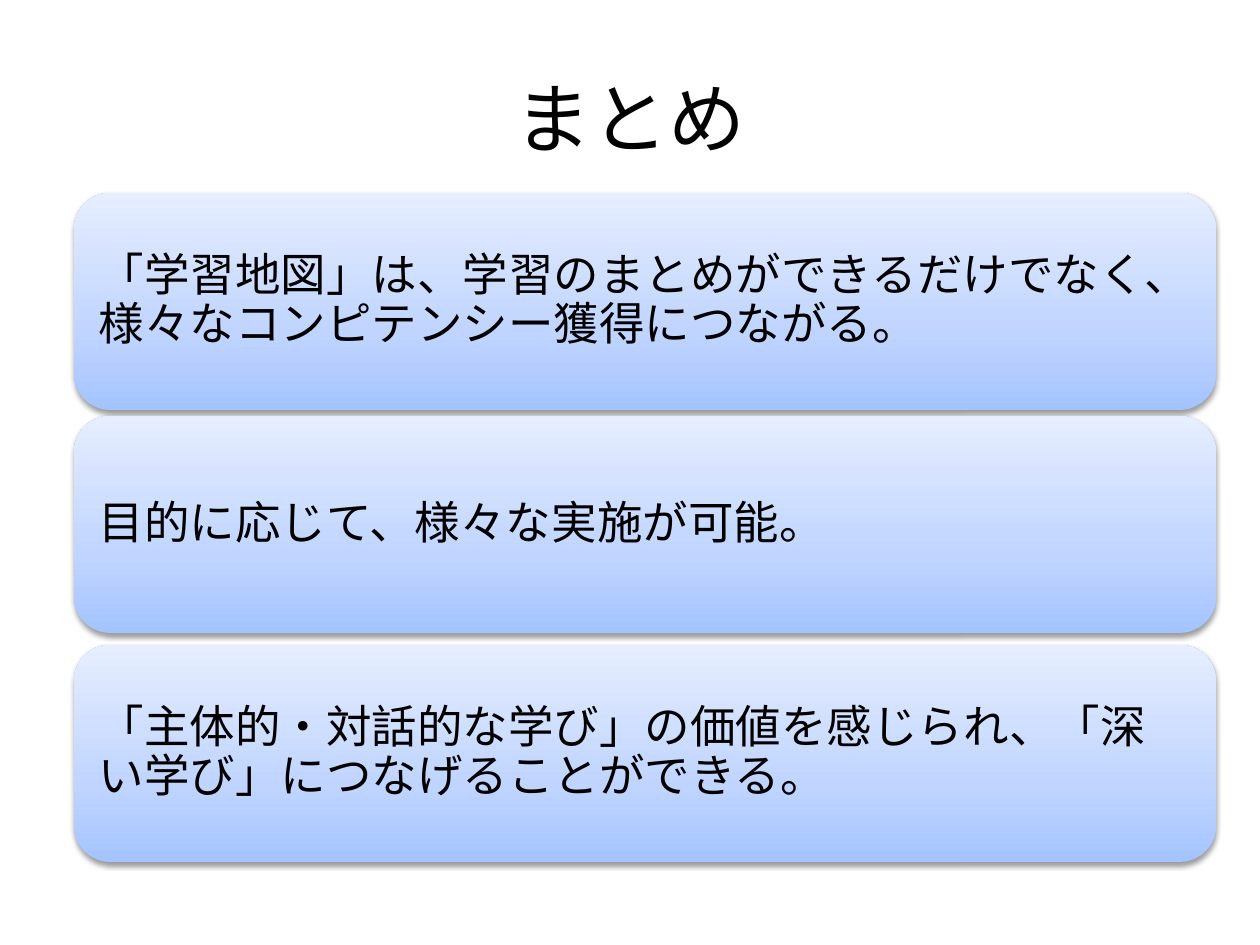
from dataclasses import dataclass

from pptx import Presentation
from pptx.dml.color import RGBColor
from pptx.enum.shapes import MSO_SHAPE
from pptx.enum.text import MSO_ANCHOR, PP_ALIGN
from pptx.oxml import parse_xml
from pptx.oxml.ns import nsdecls
from pptx.shapes.autoshape import Shape
from pptx.slide import Slide
from pptx.util import Emu, Pt

PX_PER_INCH = 126
FONT = "Lato"
BLACK = RGBColor(0x00, 0x00, 0x00)
GRADIENT = (
    (0, RGBColor(0xA4, 0xC4, 0xFF)),
    (35, RGBColor(0xBF, 0xD4, 0xFF)),
    (100, RGBColor(0xE6, 0xEE, 0xFF)),
)

CARD_LEFT, CARD_WIDTH, CARD_HEIGHT = 74, 1142, 217
CARD_INSET = 14


@dataclass(frozen=True)
class Card:
    top: int
    text: str


CARDS = (
    Card(193, "「学習地図」は、学習のまとめができるだけでなく、様々なコンピテンシー獲得につながる。"),
    Card(416, "目的に応じて、様々な実施が可能。"),
    Card(645, "「主体的・対話的な学び」の価値を感じられ、「深い学び」につなげることができる。"),
)


def px(length: int) -> Emu:
    return Emu(round(length * 914400 / PX_PER_INCH))


def write_text(shape: Shape, text: str, size: int, align: PP_ALIGN, spacing: float) -> None:
    frame = shape.text_frame
    frame.word_wrap = True
    frame.vertical_anchor = MSO_ANCHOR.MIDDLE
    para = frame.paragraphs[0]
    para.text = text
    para.alignment = align
    para.line_spacing = spacing
    para.font.name = FONT
    para.font.size = Pt(size)
    para.font.color.rgb = BLACK


def add_gradient_and_shadow(shape: Shape) -> None:
    """Fill upwards from dark to light and cast a soft shadow below."""
    stops = "".join(
        f'<a:gs pos="{percent * 1000}"><a:srgbClr val="{color}"/></a:gs>'
        for percent, color in GRADIENT
    )
    fill = parse_xml(
        f'<a:gradFill {nsdecls("a")} rotWithShape="1"><a:gsLst>{stops}</a:gsLst>'
        '<a:lin ang="16200000" scaled="0"/></a:gradFill>'
    )
    shadow = parse_xml(
        f'<a:effectLst {nsdecls("a")}>'
        f'<a:outerShdw blurRad="{Pt(3.1)}" dist="{Pt(1.6)}" dir="5400000" rotWithShape="0">'
        f'<a:srgbClr val="{BLACK}"><a:alpha val="38000"/></a:srgbClr>'
        "</a:outerShdw></a:effectLst>"
    )
    shape.line.fill.background()
    outline = shape.line._get_or_add_ln()
    outline.addprevious(fill)
    outline.addnext(shadow)


def add_title(page: Slide, text: str) -> None:
    box = page.shapes.add_textbox(px(63), px(38), px(1134), px(158))
    write_text(box, text, 44, PP_ALIGN.CENTER, 1.0)


def add_card(page: Slide, card: Card) -> None:
    shape = page.shapes.add_shape(
        MSO_SHAPE.ROUNDED_RECTANGLE,
        px(CARD_LEFT), px(card.top), px(CARD_WIDTH), px(CARD_HEIGHT),
    )
    add_gradient_and_shadow(shape)
    frame = shape.text_frame
    frame.margin_left = frame.margin_right = px(CARD_INSET)
    frame.margin_top = frame.margin_bottom = px(CARD_INSET)
    write_text(shape, card.text, 26, PP_ALIGN.LEFT, 0.9)


def main() -> None:
    deck = Presentation()
    deck.slide_width, deck.slide_height = px(1260), px(945)
    page = deck.slides.add_slide(deck.slide_layouts[6])
    add_title(page, "まとめ")
    for card in CARDS:
        add_card(page, card)
    deck.save("out.pptx")


if __name__ == "__main__":
    main()
